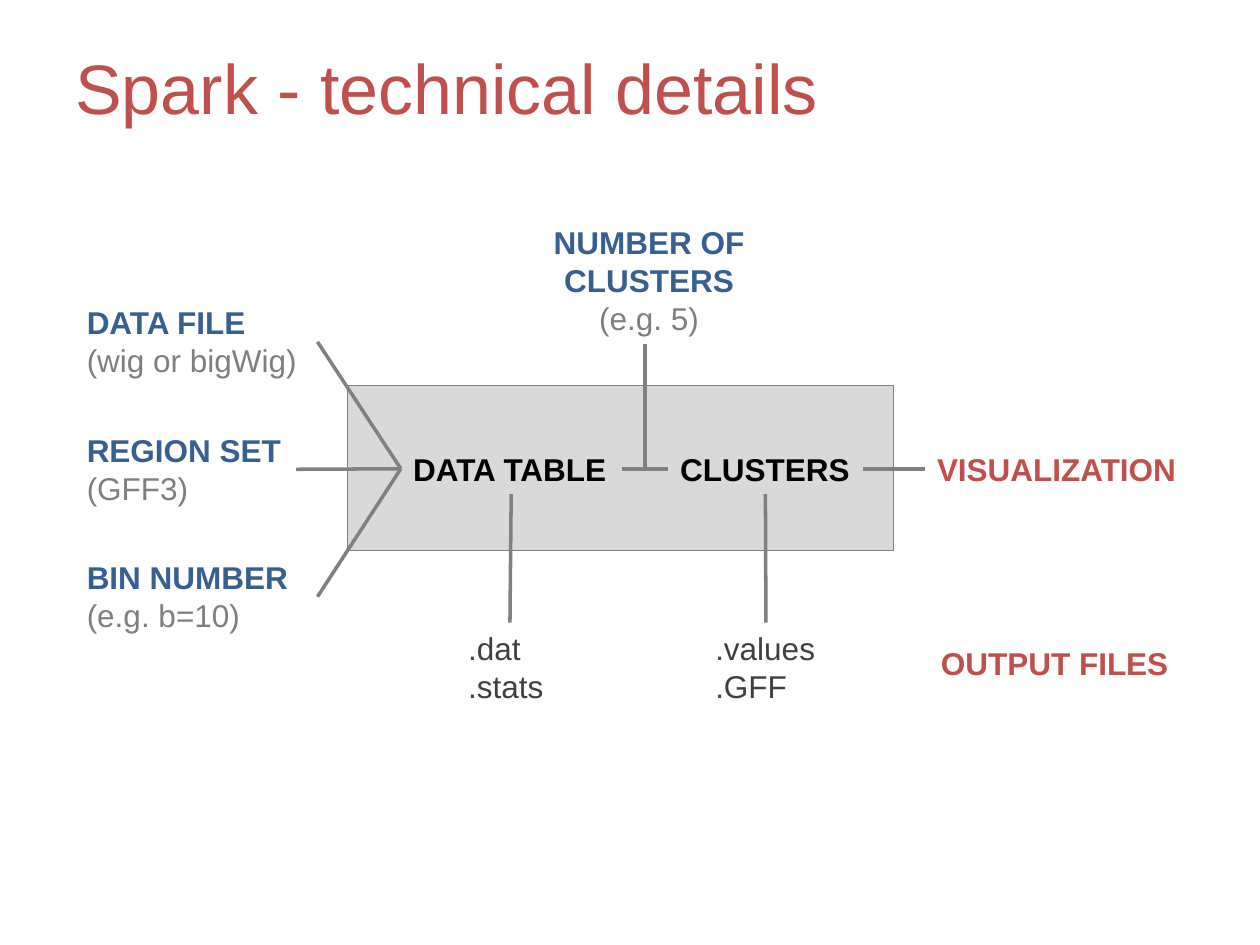
from dataclasses import dataclass

from lxml import etree
from pptx import Presentation
from pptx.dml.color import RGBColor
from pptx.enum.shapes import MSO_CONNECTOR, MSO_SHAPE
from pptx.enum.text import MSO_ANCHOR, MSO_AUTO_SIZE, PP_ALIGN
from pptx.oxml.ns import qn
from pptx.util import Cm, Pt

STRAIGHT = MSO_CONNECTOR.STRAIGHT
RECTANGLE = MSO_SHAPE.RECTANGLE
MIDDLE, TOP_ANCHOR = MSO_ANCHOR.MIDDLE, MSO_ANCHOR.TOP
GROW, FIXED = MSO_AUTO_SIZE.SHAPE_TO_FIT_TEXT, MSO_AUTO_SIZE.NONE
LEFT_ALIGN, CENTER = PP_ALIGN.LEFT, PP_ALIGN.CENTER
TOP, LEFT, BOTTOM, RIGHT = range(4)  # connection sites of a rectangle


@dataclass(frozen=True)
class Theme:
    font: str = "Arial"
    title_size: int = 40
    body_size: int = 18
    line_width: float = 2
    border_width: float = 0.75
    red: str = "C0504D"
    blue: str = "376092"
    black: str = "000000"
    dark: str = "404040"
    gray: str = "7F7F7F"
    line: str = "808080"
    panel: str = "D9D9D9"


THEME = Theme()


@dataclass(frozen=True)
class Line:
    text: str
    color: str
    bold: bool = False
    size: int = THEME.body_size


@dataclass(frozen=True)
class Label:
    left: float
    top: float
    width: float
    height: float
    lines: tuple[Line, ...]
    wrap: bool = True
    align: PP_ALIGN = LEFT_ALIGN
    anchor: MSO_ANCHOR = TOP_ANCHOR
    grow: bool = True


def add_label(slide, label: Label):
    sp = slide.shapes.add_textbox(Cm(label.left), Cm(label.top),
                                  Cm(label.width), Cm(label.height))
    tf = sp.text_frame
    tf.word_wrap = label.wrap
    tf.auto_size = GROW if label.grow else FIXED
    tf.vertical_anchor = label.anchor
    for i, line in enumerate(label.lines):
        p = tf.add_paragraph() if i else tf.paragraphs[0]
        p.alignment = label.align
        r = p.add_run()
        r.text = line.text
        r.font.name = THEME.font
        r.font.size = Pt(line.size)
        r.font.bold = line.bold
        r.font.color.rgb = RGBColor.from_string(line.color)
    return sp


def add_line(slide, x1: float = 0, y1: float = 0, x2: float = 0, y2: float = 0):
    cxn = slide.shapes.add_connector(STRAIGHT, Cm(x1), Cm(y1), Cm(x2), Cm(y2))
    cxn.line.color.rgb = RGBColor.from_string(THEME.line)
    cxn.line.width = Pt(THEME.line_width)
    etree.SubElement(cxn._element.spPr, qn("a:effectLst"))
    return cxn


def join(slide, start, start_site: int, end, end_site: int) -> None:
    cxn = add_line(slide)
    cxn.begin_connect(start, start_site)
    cxn.end_connect(end, end_site)


def add_panel(slide, left: float, top: float, width: float, height: float) -> None:
    sp = slide.shapes.add_shape(RECTANGLE, Cm(left), Cm(top), Cm(width), Cm(height))
    sp.shadow.inherit = False
    sp.fill.solid()
    sp.fill.fore_color.rgb = RGBColor.from_string(THEME.panel)
    sp.line.color.rgb = RGBColor.from_string(THEME.gray)
    sp.line.width = Pt(THEME.border_width)


def main() -> None:
    prs = Presentation()
    prs.slide_width, prs.slide_height = Cm(25.4), Cm(19.05)
    s = prs.slides.add_slide(prs.slide_layouts[6])

    # Panel and title
    add_panel(s, 7.01, 7.77, 11, 3.33)
    add_label(s, Label(1.27, 0.15, 22.86, 3.18,
                       (Line("Spark - technical details", THEME.red,
                             size=THEME.title_size),),
                       anchor=MIDDLE, grow=False))

    # Main flow: data table, clusters, visualization
    table, clusters, visualization = [
        add_label(s, Label(left, 8.94, width, 1.02,
                           (Line(text, color, True),), wrap=False))
        for text, left, width, color in (
            ("DATA TABLE", 8.08, 4.45, THEME.black),
            ("CLUSTERS", 13.46, 3.94, THEME.black),
            ("VISUALIZATION", 18.64, 5.41, THEME.red))]
    join(s, table, RIGHT, clusters, LEFT)
    join(s, clusters, RIGHT, visualization, LEFT)

    # Inputs, evenly stacked and joined to the data table
    inputs = (("DATA FILE", "(wig or bigWig)", 4.9, True),
              ("REGION SET", "(GFF3)", 4.47, False),
              ("BIN NUMBER", "(e.g. b=10)", 4.9, True))
    for i, (name, example, width, wrap) in enumerate(inputs):
        sp = add_label(s, Label(1.5, 5.99 + i * 2.57, width, 1.8,
                                (Line(name, THEME.blue, True),
                                 Line(example, THEME.gray)), wrap=wrap))
        join(s, sp, RIGHT, table, LEFT)

    # Number of clusters, feeding the step from table to clusters
    add_label(s, Label(10.85, 4.37, 4.47, 2.57,
                       (Line("NUMBER OF CLUSTERS", THEME.blue, True),
                        Line("(e.g. 5)", THEME.gray)), align=CENTER))
    add_line(s, 13, 9.43, 13, 6.93)

    # Output files below their sources
    outputs = ((table, 9.19, 2.18, (".dat", ".stats")),
               (clusters, 14.17, 2.54, (".values", ".GFF")))
    for source, left, width, names in outputs:
        sp = add_label(s, Label(left, 12.55, width, 1.8,
                                tuple(Line(n, THEME.dark) for n in names)))
        join(s, sp, TOP, source, BOTTOM)
    add_label(s, Label(18.72, 12.85, 5.31, 1.02,
                       (Line("OUTPUT FILES", THEME.red, True),)))

    prs.save("out.pptx")


if __name__ == "__main__":
    main()
